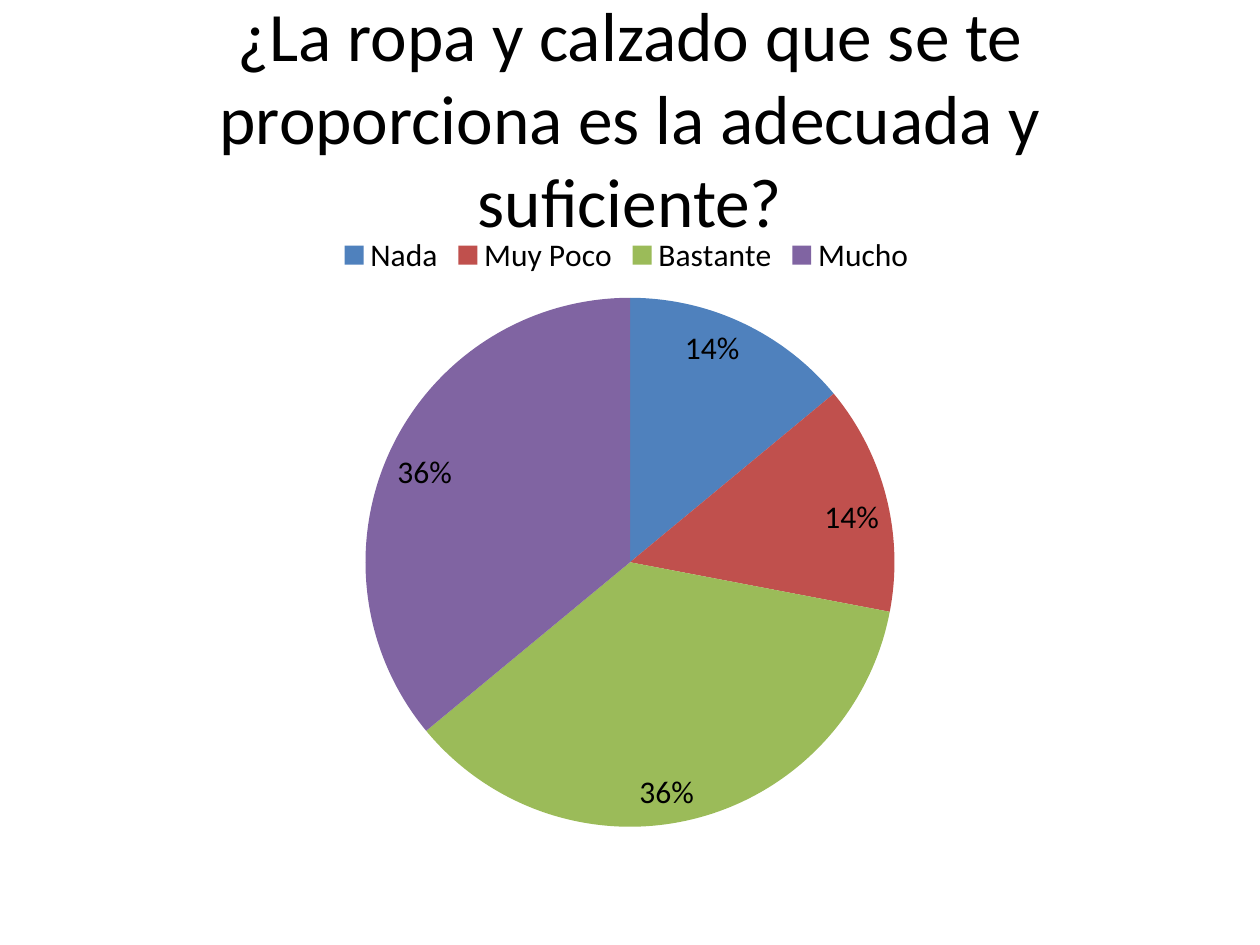
from dataclasses import dataclass

from pptx import Presentation
from pptx.chart.data import CategoryChartData
from pptx.dml.color import RGBColor
from pptx.enum.chart import XL_CHART_TYPE as ChartType
from pptx.enum.chart import XL_LABEL_POSITION as LabelPosition
from pptx.enum.chart import XL_LEGEND_POSITION as LegendPosition
from pptx.enum.text import MSO_ANCHOR as Anchor
from pptx.enum.text import PP_ALIGN as Align
from pptx.util import Inches, Pt


@dataclass(frozen=True)
class Theme:
    font: str = "Calibri"
    ink: str = "000000"
    title_size: float = 39.6
    chart_size: float = 18


@dataclass(frozen=True)
class Area:
    """A region given as shares of the slide's width and height."""
    left: float
    top: float
    width: float
    height: float


@dataclass(frozen=True)
class Answer:
    label: str
    percent: int
    color: str


THEME = Theme()
SLIDE_WIDTH, SLIDE_HEIGHT = Inches(10), Inches(7.5)
QUESTION = "¿La ropa y calzado que se te proporciona es la adecuada y suficiente?"
QUESTION_AREA = Area(0.05, 0.04, 0.9, 1 / 6)
PIE_AREA = Area(0.05, 7 / 30, 0.9, 0.66)
ANSWERS = (
    Answer("Nada", 14, "4F81BD"),
    Answer("Muy Poco", 14, "C0504D"),
    Answer("Bastante", 36, "9BBB59"),
    Answer("Mucho ", 36, "8064A2"),
)


def to_emu(area: Area) -> tuple[int, int, int, int]:
    return (
        round(area.left * SLIDE_WIDTH),
        round(area.top * SLIDE_HEIGHT),
        round(area.width * SLIDE_WIDTH),
        round(area.height * SLIDE_HEIGHT),
    )


def set_attributes(target, values: dict) -> None:
    for attribute, value in values.items():
        setattr(target, attribute, value)


def style_font(font, size: float) -> None:
    set_attributes(font, {"name": THEME.font, "size": Pt(size), "bold": False})
    font.color.rgb = RGBColor.from_string(THEME.ink)


def add_question(slide, text: str, area: Area) -> None:
    frame = slide.shapes.add_textbox(*to_emu(area)).text_frame
    set_attributes(frame, {"word_wrap": True, "vertical_anchor": Anchor.MIDDLE})
    paragraph = frame.paragraphs[0]
    paragraph.alignment = Align.CENTER
    run = paragraph.add_run()
    run.text = text
    style_font(run.font, THEME.title_size)


def add_answer_pie(slide, answers: tuple[Answer, ...], area: Area) -> None:
    data = CategoryChartData()
    data.categories = [answer.label for answer in answers]
    data.add_series("Series 1", [answer.percent for answer in answers])
    chart = slide.shapes.add_chart(ChartType.PIE, *to_emu(area), data).chart
    set_attributes(chart, {"has_title": False, "has_legend": True})
    set_attributes(chart.legend, {"position": LegendPosition.TOP, "include_in_layout": False})
    style_font(chart.font, THEME.chart_size)

    pie = chart.plots[0]
    set_attributes(pie, {"vary_by_categories": True, "has_data_labels": True})
    set_attributes(pie.data_labels, {
        "show_percentage": True,
        "show_value": False,
        "number_format": "0%",
        "number_format_is_linked": False,
        "position": LabelPosition.INSIDE_END,
    })
    style_font(pie.data_labels.font, THEME.chart_size)
    for index, answer in enumerate(answers):
        fill = pie.series[0].points[index].format.fill
        fill.solid()
        fill.fore_color.rgb = RGBColor.from_string(answer.color)


def main() -> None:
    presentation = Presentation()
    set_attributes(presentation, {"slide_width": SLIDE_WIDTH, "slide_height": SLIDE_HEIGHT})
    slide = presentation.slides.add_slide(presentation.slide_layouts[6])
    add_question(slide, QUESTION, QUESTION_AREA)
    add_answer_pie(slide, ANSWERS, PIE_AREA)
    presentation.save("out.pptx")


if __name__ == "__main__":
    main()
